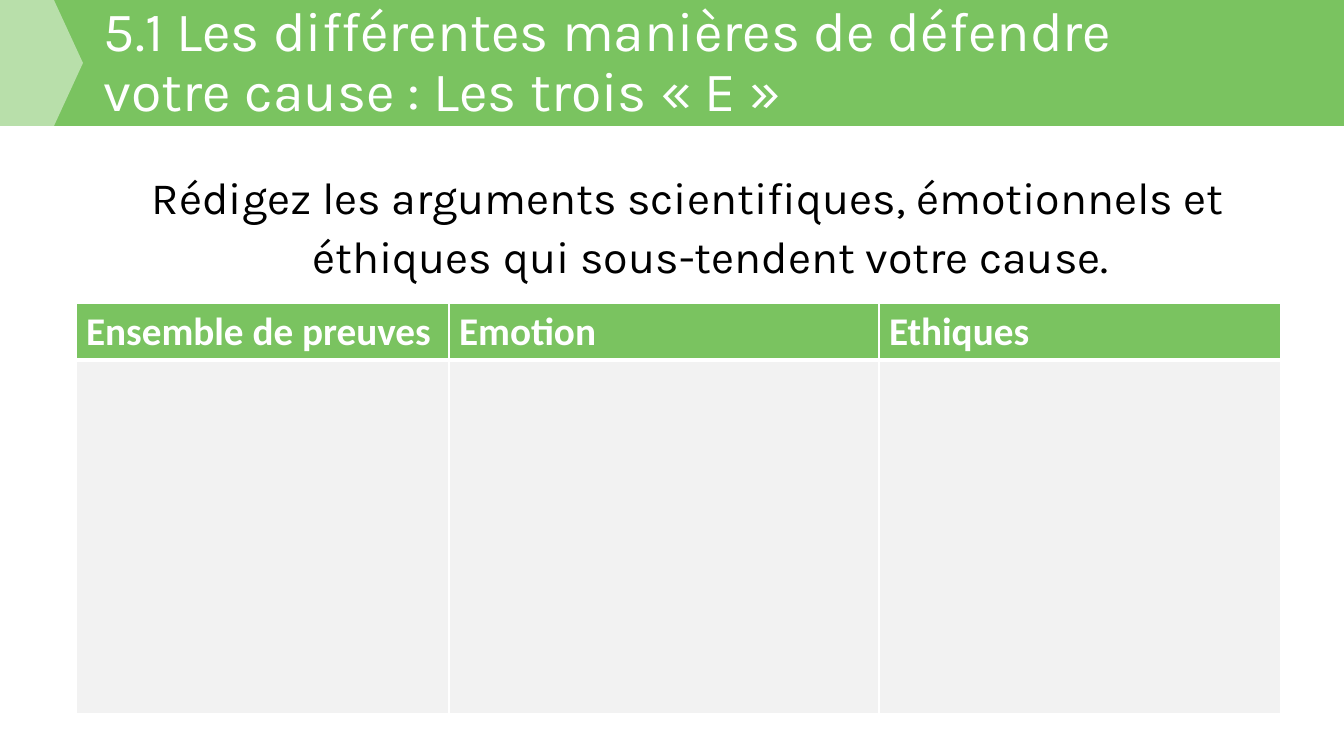
"""Build the slide on the three "E" ways of defending a cause."""
from dataclasses import dataclass

import lxml.etree
import pptx
import pptx.dml.color
import pptx.enum.shapes
import pptx.enum.text
import pptx.oxml.ns
import pptx.util

SHAPE = pptx.enum.shapes.MSO_SHAPE
ALIGN = pptx.enum.text.PP_ALIGN
ANCHOR = pptx.enum.text.MSO_ANCHOR
PX = 914400 / 100.8


@dataclass(frozen=True)
class Theme:
    green: str = "7AC360"
    white: str = "FFFFFF"
    black: str = "000000"
    grey: str = "F2F2F2"
    text_font: str = "Karla"
    table_font: str = "Calibri"
    title_size: float = 39.6
    prompt_size: int = 32
    header_size: int = 28


def px(length):
    return pptx.util.Emu(round(length * PX))


def rgb(colour):
    return pptx.dml.color.RGBColor.from_string(colour)


def qn(tag):
    return pptx.oxml.ns.qn(tag)


def apply(target, values):
    for name, value in values.items():
        setattr(target, name, value)


class SlideBuilder:
    def __init__(self, slide, theme):
        self.slide = slide
        self.theme = theme

    def paint(self, fill, colour):
        fill.solid()
        fill.fore_color.rgb = rgb(colour)

    def shape(self, kind, box, colour, alpha=None, adjust=None):
        shape = self.slide.shapes.add_shape(kind, *map(px, box))
        shape.shadow.inherit = False
        self.paint(shape.fill, colour)
        shape.line.fill.background()
        if adjust is not None:
            shape.adjustments[0] = adjust
        if alpha is not None:
            tint = shape._element.spPr.find(".//" + qn("a:srgbClr"))
            lxml.etree.SubElement(tint, qn("a:alpha"), val=str(alpha * 1000))

    def styled_run(self, paragraph, text, colour, **font):
        run = paragraph.add_run()
        run.text = text
        apply(run.font, font)
        run.font.color.rgb = rgb(colour)

    def text(self, box, text, colour, size, frame, layout, hanging=0):
        text_frame = self.slide.shapes.add_textbox(*map(px, box)).text_frame
        apply(text_frame, {"word_wrap": True, **frame})
        paragraph = text_frame.paragraphs[0]
        apply(paragraph, layout)
        if hanging:
            properties = paragraph._p.get_or_add_pPr()
            properties.set("marL", str(px(hanging)))
            properties.set("indent", str(-px(hanging)))
        self.styled_run(paragraph, text, colour, name=self.theme.text_font,
                        size=pptx.util.Pt(size))

    def borders(self, cell, widths):
        properties = cell._tc.get_or_add_tcPr()
        for side, width in widths.items():
            line = lxml.etree.SubElement(
                properties, qn(f"a:ln{side}"), w=str(pptx.util.Pt(width)))
            fill = lxml.etree.SubElement(line, qn("a:solidFill"))
            lxml.etree.SubElement(fill, qn("a:srgbClr"), val=self.theme.white)

    def table(self, left, top, widths, heights, headings):
        theme = self.theme
        box = (left, top, sum(widths), sum(heights))
        table = self.slide.shapes.add_table(
            len(heights), len(widths), *map(px, box)).table
        for column, width in zip(table.columns, widths):
            column.width = px(width)
        for row, height in zip(table.rows, heights):
            row.height = px(height)
        for column, heading in enumerate(headings):
            header, answer = table.cell(0, column), table.cell(1, column)
            self.borders(header, {"L": 1, "R": 1, "T": 1, "B": 3})
            self.borders(answer, {"L": 1, "R": 1, "T": 3, "B": 1})
            self.paint(header.fill, theme.green)
            self.paint(answer.fill, theme.grey)
            self.styled_run(header.text_frame.paragraphs[0], heading, theme.white,
                            name=theme.table_font, bold=True,
                            size=pptx.util.Pt(theme.header_size))


def main():
    presentation = pptx.Presentation()
    apply(presentation, {"slide_width": px(1344), "slide_height": px(756)})
    theme = Theme()
    builder = SlideBuilder(
        presentation.slides.add_slide(presentation.slide_layouts[6]), theme)

    builder.shape(SHAPE.RECTANGLE, (0, 0, 1344, 126), theme.green)
    builder.shape(SHAPE.PENTAGON, (0, 0, 83, 126), theme.white, alpha=47, adjust=0.35)
    builder.text(
        (94, 20, 1066, 87),
        "5.1 Les différentes manières de défendre votre cause : Les trois « E »",
        theme.white, theme.title_size,
        {"vertical_anchor": ANCHOR.MIDDLE}, {"line_spacing": 0.9})
    builder.table(76, 303, (373, 430, 402), (57, 353),
                  ("Ensemble de preuves", "Emotion", "Ethiques"))
    builder.text(
        (109, 159, 1159, 521),
        "Rédigez les arguments scientifiques, émotionnels et éthiques "
        "qui sous-tendent votre cause. ",
        theme.black, theme.prompt_size,
        {"vertical_anchor": ANCHOR.TOP},
        {"alignment": ALIGN.CENTER, "line_spacing": 1.1}, hanging=56)
    presentation.save("out.pptx")


if __name__ == "__main__":
    main()
